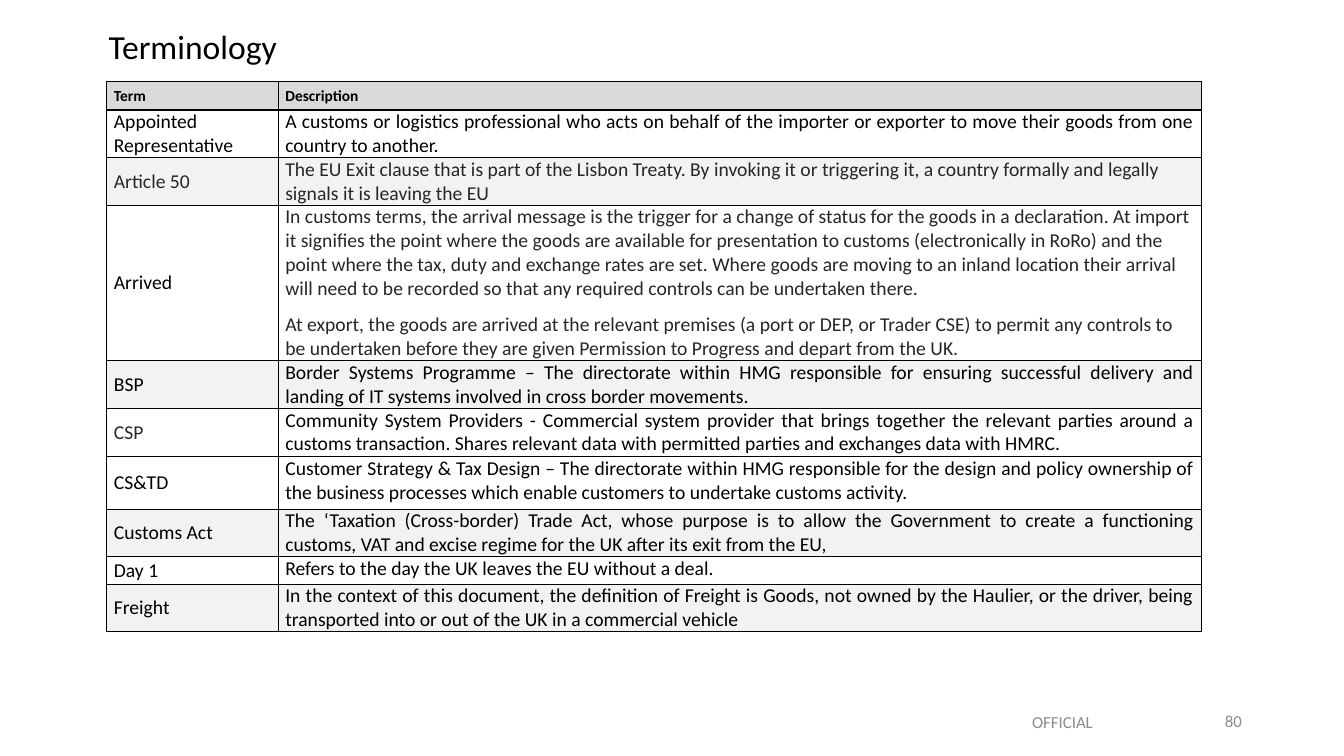
from lxml import etree
from pptx import Presentation
from pptx import util as u
from pptx.dml.color import RGBColor
from pptx.enum import text
from pptx.oxml import ns

BLACK = RGBColor(0x00, 0x00, 0x00)
CHARCOAL = RGBColor(0x26, 0x26, 0x26)
GREY = RGBColor(0x8C, 0x8C, 0x8C)
HEADER = RGBColor(0xD9, 0xD9, 0xD9)
BAND = RGBColor(0xF2, 0xF2, 0xF2)
WHITE = RGBColor(0xFF, 0xFF, 0xFF)

LEFT, CENTER = text.PP_ALIGN.LEFT, text.PP_ALIGN.CENTER
RIGHT, JUSTIFY = text.PP_ALIGN.RIGHT, text.PP_ALIGN.JUSTIFY
TOP, MIDDLE = text.MSO_ANCHOR.TOP, text.MSO_ANCHOR.MIDDLE


def write(frame, lines, size, color, bold=False, **layout):
    for index, line in enumerate(lines):
        para = frame.paragraphs[0] if index == 0 else frame.add_paragraph()
        for name, value in layout.items():
            setattr(para, name, value)
        span = para.add_run()
        span.text = line
        formats = {"name": "Calibri", "size": u.Pt(size), "bold": bold}
        for name, value in formats.items():
            setattr(span.font, name, value)
        span.font.color.rgb = color


def add_borders(cell):
    properties = cell._tc.get_or_add_tcPr()
    for side in ("a:lnL", "a:lnR", "a:lnT", "a:lnB"):
        line = etree.SubElement(properties, ns.qn(side), w=str(u.Pt(1)))
        fill = etree.SubElement(line, ns.qn("a:solidFill"))
        etree.SubElement(fill, ns.qn("a:srgbClr"), val=str(BLACK))


deck = Presentation()
deck.slide_width, deck.slide_height = u.Cm(33.87), u.Cm(19.05)
page = deck.slides.add_slide(deck.slide_layouts[6])

labels = [
    ("Terminology", 2.49, 0.51, 14.71, 1.45, 24, BLACK, LEFT, 0.9),
    ("80", 23.93, 17.65, 7.62, 1.02, 12, GREY, RIGHT, 1.0),
    ("OFFICIAL ", 21.11, 17.68, 11.43, 1.02, 12, GREY, CENTER, 1.0),
]
for label, left, top, width, height, size, color, align, spacing in labels:
    box = page.shapes.add_textbox(u.Cm(left), u.Cm(top), u.Cm(width), u.Cm(height))
    box.text_frame.word_wrap = True
    box.text_frame.vertical_anchor = MIDDLE
    write(box.text_frame, [label], size, color, alignment=align, line_spacing=spacing)

terms = [
    ("Term", BLACK, 0.71, ["Description"], BLACK, LEFT, MIDDLE),
    ("Appointed Representative", BLACK, 1.2, [
        "A customs or logistics professional who acts on behalf of the importer or exporter "
        "to move their goods from one country to another."], BLACK, JUSTIFY, TOP),
    ("Article 50", CHARCOAL, 1.2, [
        "The EU Exit clause that is part of the Lisbon Treaty. By invoking it or triggering it, "
        "a country formally and legally signals it is leaving the EU"], CHARCOAL, LEFT, MIDDLE),
    ("Arrived", BLACK, 3.92, [
        "In customs terms, the arrival message is the trigger for a change of status for the goods "
        "in a declaration. At import it signifies the point where the goods are available for "
        "presentation to customs (electronically in RoRo) and the point where the tax, duty and "
        "exchange rates are set. Where goods are moving to an inland location their arrival will "
        "need to be recorded so that any required controls can be undertaken there.",
        "At export, the goods are arrived at the relevant premises (a port or DEP, or Trader CSE) "
        "to permit any controls to be undertaken before they are given Permission to Progress "
        "and depart from the UK."], CHARCOAL, LEFT, MIDDLE),
    ("BSP", BLACK, 1.2, [
        "Border Systems Programme – The directorate within HMG responsible for ensuring successful "
        "delivery and landing of IT systems involved in cross border movements."],
     BLACK, JUSTIFY, MIDDLE),
    ("CSP", CHARCOAL, 1.22, [
        "Community System Providers - Commercial system provider that brings together the relevant "
        "parties around a customs transaction. Shares relevant data with permitted parties and "
        "exchanges data with HMRC."], BLACK, JUSTIFY, TOP),
    ("CS&TD", BLACK, 1.32, [
        "Customer Strategy & Tax Design – The directorate within HMG responsible for the design and "
        "policy ownership of the business processes which enable customers to undertake customs "
        "activity."], BLACK, JUSTIFY, TOP),
    ("Customs Act", BLACK, 1.2, [
        "The ‘Taxation (Cross-border) Trade Act, whose purpose is to allow the Government to create "
        "a functioning customs, VAT and excise regime for the UK after its exit from the EU,"],
     BLACK, JUSTIFY, TOP),
    ("Day 1", BLACK, 0.69, ["Refers to the day the UK leaves the EU without a deal."],
     BLACK, JUSTIFY, TOP),
    ("Freight", BLACK, 1.2, [
        "In the context of this document, the definition of Freight is Goods, not owned by the "
        "Haulier, or the driver, being transported into or out of the UK in a commercial vehicle"],
     BLACK, JUSTIFY, TOP),
]
banded = {"Article 50", "BSP", "Customs Act", "Freight"}

total = sum(entry[2] for entry in terms)
glossary = page.shapes.add_table(
    len(terms), 2, u.Cm(2.69), u.Cm(2.06), u.Cm(27.59), u.Cm(total)).table
glossary.first_row = glossary.horz_banding = False
for column, width in zip(glossary.columns, (4.32, 23.27)):
    column.width = u.Cm(width)

margins = {"margin_left": u.Cm(0.18), "margin_right": u.Cm(0.18),
           "margin_top": 0, "margin_bottom": 0}
for row, (term, term_color, height, lines, color, align, anchor) in enumerate(terms):
    glossary.rows[row].height = u.Cm(height)
    heading = row == 0
    shade = HEADER if heading else BAND if term in banded else WHITE
    contents = [([term], term_color, LEFT, MIDDLE), (lines, color, align, anchor)]
    for column, (words, ink, alignment, vertical) in enumerate(contents):
        cell = glossary.cell(row, column)
        for name, value in margins.items():
            setattr(cell, name, value)
        cell.vertical_anchor = vertical
        add_borders(cell)
        cell.fill.solid()
        cell.fill.fore_color.rgb = shade
        write(cell.text_frame, words, 11 if heading else 14, ink, heading,
              alignment=alignment, space_before=u.Pt(6), space_after=u.Pt(3))

deck.save("out.pptx")
